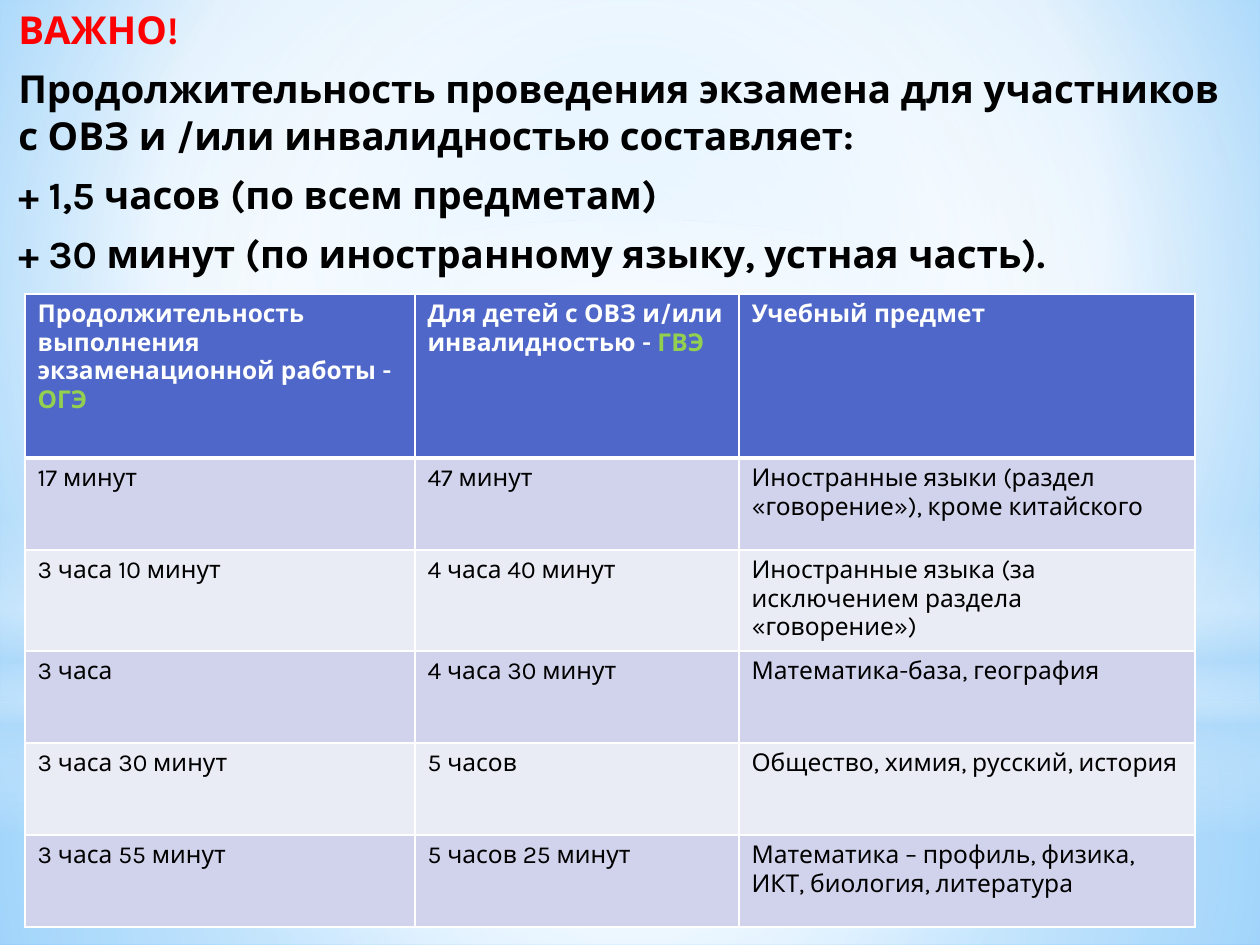
from pptx import Presentation
from pptx.dml.color import RGBColor
from pptx.enum.shapes import MSO_SHAPE
from pptx.oxml import parse_xml
from pptx.oxml.ns import nsdecls, qn
from pptx.util import Emu, Pt

COLORS = {
    "white": "FFFFFF", "black": "000000", "red": "FF0000", "green": "92D050",
    "header": "4E67C8", "odd": "D0D3EB", "even": "E9EBF5",
    "haze": "B4DCFA", "sky": "9ED5FF", "deep sky": "5BB9FF",
}
CENTER = (50, 50, 50, 50)

INTRO = [
    ("ВАЖНО!", "red"),
    ("Продолжительность проведения экзамена для участников с ОВЗ и /или инвалидностью составляет:", "black"),
    ("+ 1,5 часов (по всем предметам)", "black"),
    ("+ 30 минут (по иностранному языку, устная часть).", "black"),
]
HEADER = [
    [("Продолжительность выполнения экзаменационной работы - ", "white"), ("ОГЭ", "green")],
    [("Для детей с ОВЗ и/или инвалидностью - ", "white"), ("ГВЭ", "green")],
    [("Учебный предмет", "white")],
]
DURATIONS = [
    ("17 минут", "47 минут", "Иностранные языки (раздел «говорение»), кроме китайского"),
    ("3 часа 10 минут", "4 часа 40 минут", "Иностранные языка (за исключением раздела «говорение»)"),
    ("3 часа", "4 часа 30 минут", "Математика-база, география"),
    ("3 часа 30 минут", "5 часов", "Общество, химия, русский, история"),
    ("3 часа 55 минут", "5 часов 25 минут", "Математика – профиль, физика, ИКТ, биология, литература"),
]


def px(length):
    return Emu(round(length * 914400 / 126))


class SlideBuilder:
    """Holds the text style and the slide being filled."""

    def __init__(self, slide, font="Karla"):
        self.slide = slide
        self.font = font

    def set_gradient(self, fill, element, stops, focus=None):
        """Give the fill stops of (position, color, opacity); without a focus it runs downwards."""
        fill.gradient()
        stop_xml = "".join(
            f'<a:gs pos="{position * 1000}"><a:srgbClr val="{COLORS[color]}">'
            f'<a:alpha val="{opacity * 1000}"/></a:srgbClr></a:gs>'
            for position, color, opacity in stops)
        if focus:
            sides = " ".join(f'{side}="{value * 1000}"' for side, value in zip("ltrb", focus))
            direction = f'<a:path path="circle"><a:fillToRect {sides}/></a:path>'
        else:
            direction = '<a:lin ang="5400000" scaled="0"/>'
        gradient = parse_xml(f'<a:gradFill {nsdecls("a")} rotWithShape="1">'
                             f'<a:gsLst>{stop_xml}</a:gsLst>{direction}</a:gradFill>')
        current = element.find(".//" + qn("a:gradFill"))
        current.getparent().replace(current, gradient)

    def add_background(self, stops, focus):
        self.set_gradient(self.slide.background.fill, self.slide.element, stops, focus)

    def add_glow(self, kind, box, stops, focus=None):
        shape = self.slide.shapes.add_shape(kind, *map(px, box))
        shape.shadow.inherit = False
        shape.line.fill.background()
        self.set_gradient(shape.fill, shape.element, stops, focus)

    def add_run(self, paragraph, text, color, size, bold):
        run = paragraph.add_run()
        run.text = text
        run.font.name = self.font
        run.font.size = Pt(size)
        run.font.bold = bold
        run.font.color.rgb = RGBColor.from_string(COLORS[color])

    def add_text(self, box, lines, size):
        frame = self.slide.shapes.add_textbox(*map(px, box)).text_frame
        frame.word_wrap = True
        for index, (text, color) in enumerate(lines):
            paragraph = frame.add_paragraph() if index else frame.paragraphs[0]
            paragraph.space_before = Pt(size * 0.2)
            paragraph.space_after = Pt(3)
            paragraph._p.get_or_add_pPr().set("marL", str(px(6)))
            self.add_run(paragraph, text, color, size, True)

    def set_borders(self, cell, top, bottom):
        """Draw white borders, one point at the sides."""
        properties = cell._tc.get_or_add_tcPr()
        widths = {"lnL": 1, "lnR": 1, "lnT": top, "lnB": bottom}
        for index, (tag, width) in enumerate(widths.items()):
            properties.insert(index, parse_xml(
                f'<a:{tag} {nsdecls("a")} w="{Pt(width)}"><a:solidFill>'
                f'<a:srgbClr val="{COLORS["white"]}"/></a:solidFill></a:{tag}>'))

    def add_table(self, left, top, widths, heights, rows, size):
        """Add a table whose first row is the header; a cell is a list of (text, color) runs."""
        table = self.slide.shapes.add_table(
            len(rows), len(widths), px(left), px(top), px(sum(widths)), px(sum(heights))).table
        for column, width in zip(table.columns, widths):
            column.width = px(width)
        for row_index, (row, height) in enumerate(zip(rows, heights)):
            table.rows[row_index].height = px(height)
            is_header = row_index == 0
            fill = "header" if is_header else ("even", "odd")[row_index % 2]
            for column_index, runs in enumerate(row):
                cell = table.cell(row_index, column_index)
                cell.fill.solid()
                cell.fill.fore_color.rgb = RGBColor.from_string(COLORS[fill])
                self.set_borders(cell, 3 if row_index == 1 else 1, 3 if is_header else 1)
                for text, color in runs:
                    self.add_run(cell.text_frame.paragraphs[0], text, color, size, is_header)


def main():
    presentation = Presentation()
    presentation.slide_width, presentation.slide_height = px(1260), px(945)
    builder = SlideBuilder(presentation.slides.add_slide(presentation.slide_layouts[6]))

    builder.add_background(
        [(0, "sky", 100), (60, "white", 100), (100, "deep sky", 100)], (20, 10, 20, 60))
    builder.add_glow(MSO_SHAPE.RECTANGLE, (0, 703, 1260, 242),
                     [(0, "white", 91), (37, "white", 76), (100, "haze", 79)], CENTER)
    builder.add_glow(MSO_SHAPE.RECTANGLE, (0, 0, 1260, 703),
                     [(0, "white", 89), (48, "white", 62), (100, "haze", 79)], CENTER)
    builder.add_glow(MSO_SHAPE.RECTANGLE, (0, 519, 1260, 315),
                     [(0, "white", 0), (29, "white", 30), (45, "haze", 40),
                      (55, "white", 26), (65, "haze", 60), (100, "white", 0)])
    builder.add_glow(MSO_SHAPE.OVAL, (0, 220, 1260, 703),
                     [(0, "white", 100), (56, "white", 0)], CENTER)

    builder.add_text((0, 0, 1235, 929), INTRO, 22)
    body = [[[(text, "black")] for text in row] for row in DURATIONS]
    builder.add_table(25, 294, [390, 324, 456], [164] + [92] * len(body), [HEADER] + body, 14)
    presentation.save("out.pptx")


if __name__ == "__main__":
    main()
